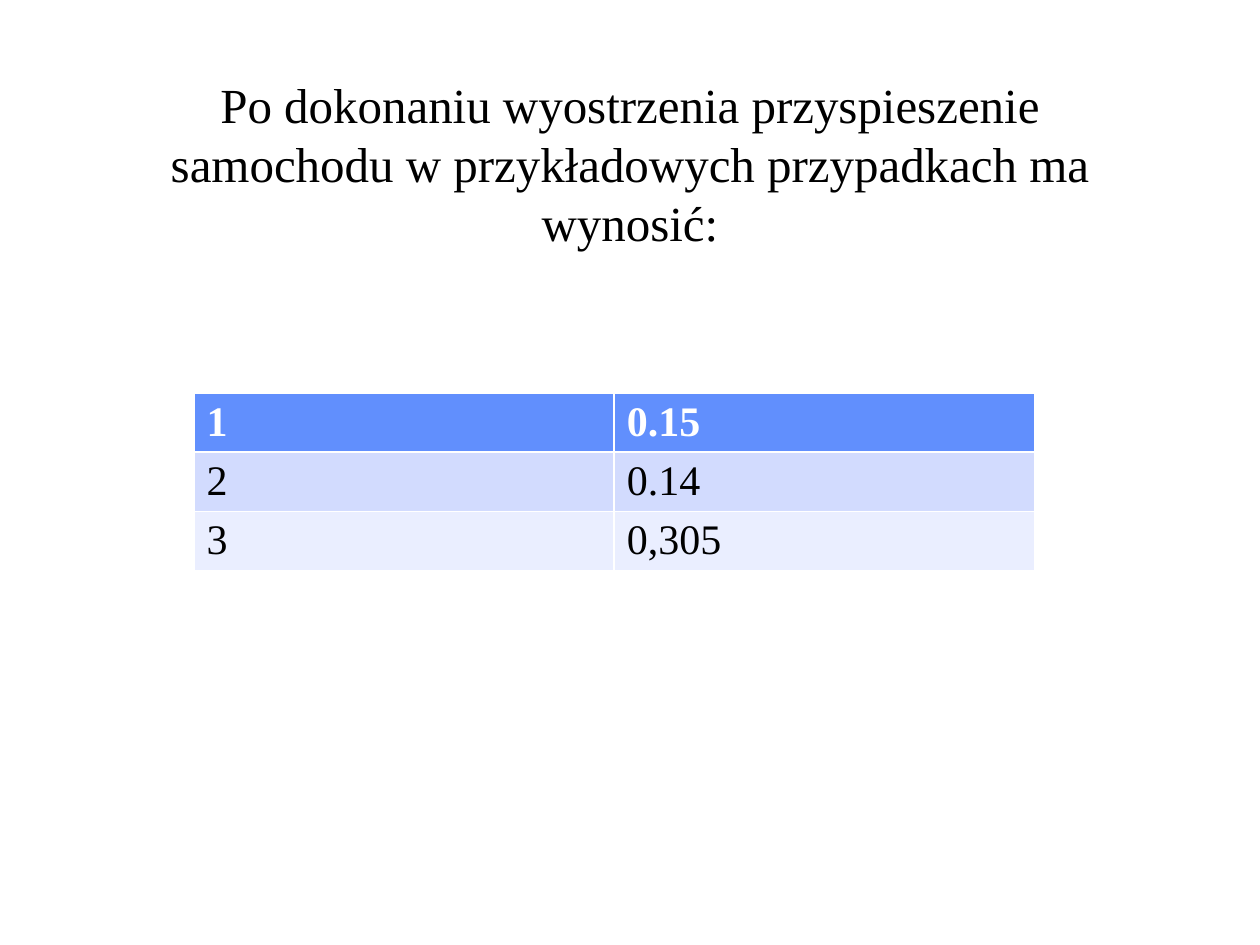
from pptx import Presentation
from pptx.dml.color import RGBColor
from pptx.enum.text import MSO_ANCHOR, MSO_AUTO_SIZE, PP_ALIGN
from pptx.util import Inches, Pt

FONT = "Times New Roman"
BLACK = RGBColor(0x00, 0x00, 0x00)
WHITE = RGBColor(0xFF, 0xFF, 0xFF)
HEADER_BLUE = RGBColor(0x61, 0x8F, 0xFD)
BAND_BLUE = RGBColor(0xD2, 0xDB, 0xFE)
PALE_BLUE = RGBColor(0xEA, 0xEE, 0xFF)


def format_font(font, size, color, bold=False):
    font.name = FONT
    font.size = Pt(size)
    font.color.rgb = color
    font.bold = bold


presentation = Presentation()
presentation.slide_width = Inches(10)
presentation.slide_height = Inches(7.5)
slide = presentation.slides.add_slide(presentation.slide_layouts[5])

title = slide.shapes.title
title.left, title.top = Inches(0.75), Inches(0.67)
title.width, title.height = Inches(8.5), Inches(1.25)
title_frame = title.text_frame
title_frame.text = (
    "Po dokonaniu wyostrzenia przyspieszenie samochodu "
    "w przykładowych przypadkach ma wynosić:"
)
title_frame.word_wrap = True
title_frame.auto_size = MSO_AUTO_SIZE.NONE
title_frame.vertical_anchor = MSO_ANCHOR.MIDDLE
title_paragraph = title_frame.paragraphs[0]
title_paragraph.alignment = PP_ALIGN.CENTER
format_font(title_paragraph.font, 28, BLACK)

accelerations = [("1", "0.15"), ("2", "0.14"), ("3", "0,305")]
row_fills = [HEADER_BLUE, BAND_BLUE, PALE_BLUE]
table = slide.shapes.add_table(
    len(accelerations), 2, Inches(1.54), Inches(3.12), Inches(6.67), Inches(1.22)
).table

for row_index, (values, fill_color) in enumerate(zip(accelerations, row_fills)):
    is_header = row_index == 0
    for column_index, value in enumerate(values):
        cell = table.cell(row_index, column_index)
        cell.text = value
        cell.fill.solid()
        cell.fill.fore_color.rgb = fill_color
        text_color = WHITE if is_header else BLACK
        format_font(cell.text_frame.paragraphs[0].font, 24, text_color, is_header)

presentation.save("out.pptx")
